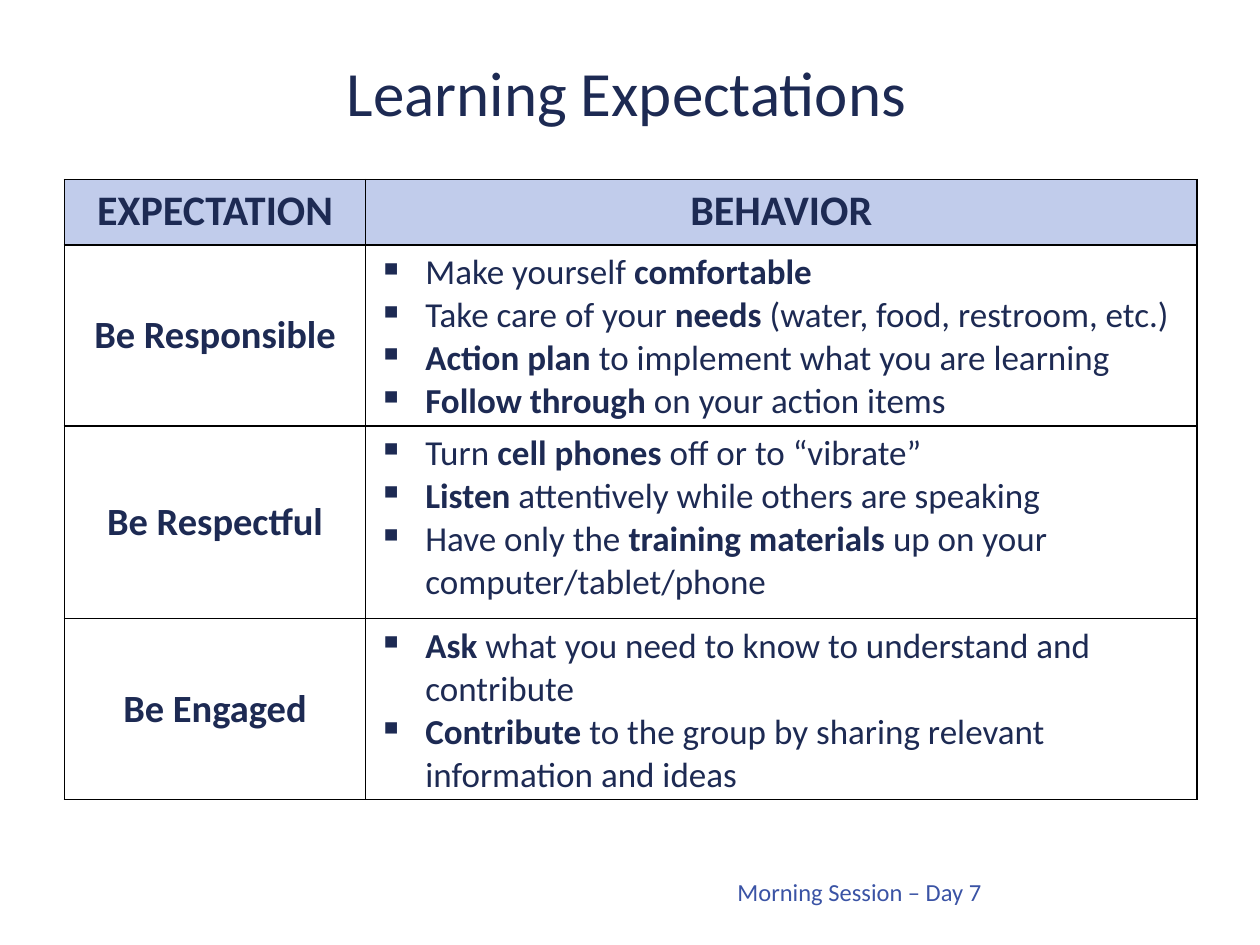
from lxml.etree import SubElement
from pptx import Presentation
from pptx.dml.color import RGBColor
from pptx.enum.text import MSO_ANCHOR as Anchor, PP_ALIGN as Align
from pptx.oxml import parse_xml
from pptx.oxml.ns import nsdecls, qn
from pptx.util import Cm, Pt

NAVY, BLUE, HEADER, WHITE = "1D2A53", "3A53A5", "C1CCEB", "FFFFFF"


def color(value):
    return RGBColor.from_string(value)


def write(para, text, size, ink=NAVY, align=Align.LEFT, bold=None):
    para.alignment = align
    para.font.name = "Calibri"
    para.font.size = Pt(size)
    para.font.color.rgb = color(ink)
    para.font.bold = bold
    for index, piece in enumerate(text.split("*")):
        if piece:
            span = para.add_run()
            span.text = piece
            if index % 2:
                span.font.bold = True


expectations = [
    ("Be Responsible", [
        "Make yourself *comfortable*",
        "Take care of your *needs* (water, food, restroom, etc.)",
        "*Action plan *to implement what you are learning",
        "*Follow through *on your action items",
    ]),
    ("Be Respectful", [
        "Turn *cell phones* off or to “vibrate”",
        "*Listen *attentively while others are speaking",
        "Have only the *training materials *up on your computer/tablet/phone",
    ]),
    ("Be Engaged", [
        "*Ask* what you need to know to understand and contribute",
        "*Contribute *to the group by sharing relevant information and ideas",
    ]),
]

deck = Presentation()
deck.slide_width, deck.slide_height = Cm(25.4), Cm(19.05)
page = deck.slides.add_slide(deck.slide_layouts[6])

texts = [
    ("Morning Session – Day 7", 14, BLUE, Align.RIGHT, Anchor.BOTTOM, (5.89, 16.76, 14.15, 1.63)),
    ("Learning Expectations", 36, NAVY, Align.CENTER, Anchor.MIDDLE, (1.3, 0.97, 22.66, 1.73)),
]
for text, size, ink, align, anchor, place in texts:
    box = page.shapes.add_textbox(*[Cm(length) for length in place])
    box.text_frame.word_wrap = True
    box.text_frame.vertical_anchor = anchor
    write(box.text_frame.paragraphs[0], text, size, ink, align)

widths = [6.07, 16.76]
heights = [1.32, 3.64, 3.89, 3.64]
table = page.shapes.add_table(
    len(heights), len(widths), Cm(1.3), Cm(3.62), Cm(sum(widths)), Cm(sum(heights))
).table
for column, width in zip(table.columns, widths):
    column.width = Cm(width)
for row, height in zip(table.rows, heights):
    row.height = Cm(height)

for cell, heading in zip(table.rows[0].cells, ["EXPECTATION", "BEHAVIOR"]):
    write(cell.text_frame.paragraphs[0], heading, 24, align=Align.CENTER, bold=True)

for row_index, (expectation, behaviors) in enumerate(expectations, 1):
    name_cell, behavior_cell = table.rows[row_index].cells
    name_cell.vertical_anchor = Anchor.MIDDLE
    write(name_cell.text_frame.paragraphs[0], expectation, 22, align=Align.CENTER, bold=True)
    frame = behavior_cell.text_frame
    for index, behavior in enumerate(behaviors):
        para = frame.add_paragraph() if index else frame.paragraphs[0]
        props = para._p.get_or_add_pPr()
        props.set("marL", str(Cm(0.95)))
        props.set("indent", str(-Cm(0.95)))
        bullet_color = SubElement(props, qn("a:buClr"))
        SubElement(bullet_color, qn("a:srgbClr")).set("val", NAVY)
        SubElement(props, qn("a:buChar")).set("char", "▪")
        write(para, behavior, 20)

for row_index, row in enumerate(table.rows):
    for cell in row.cells:
        props = cell._tc.get_or_add_tcPr()
        for side in ("lnL", "lnR", "lnT", "lnB"):
            props.append(parse_xml(
                f'<a:{side} {nsdecls("a")} w="{Pt(1)}"><a:solidFill>'
                f'<a:srgbClr val="000000"/></a:solidFill></a:{side}>'
            ))
        cell.fill.solid()
        cell.fill.fore_color.rgb = color(WHITE if row_index else HEADER)

deck.save("out.pptx")
